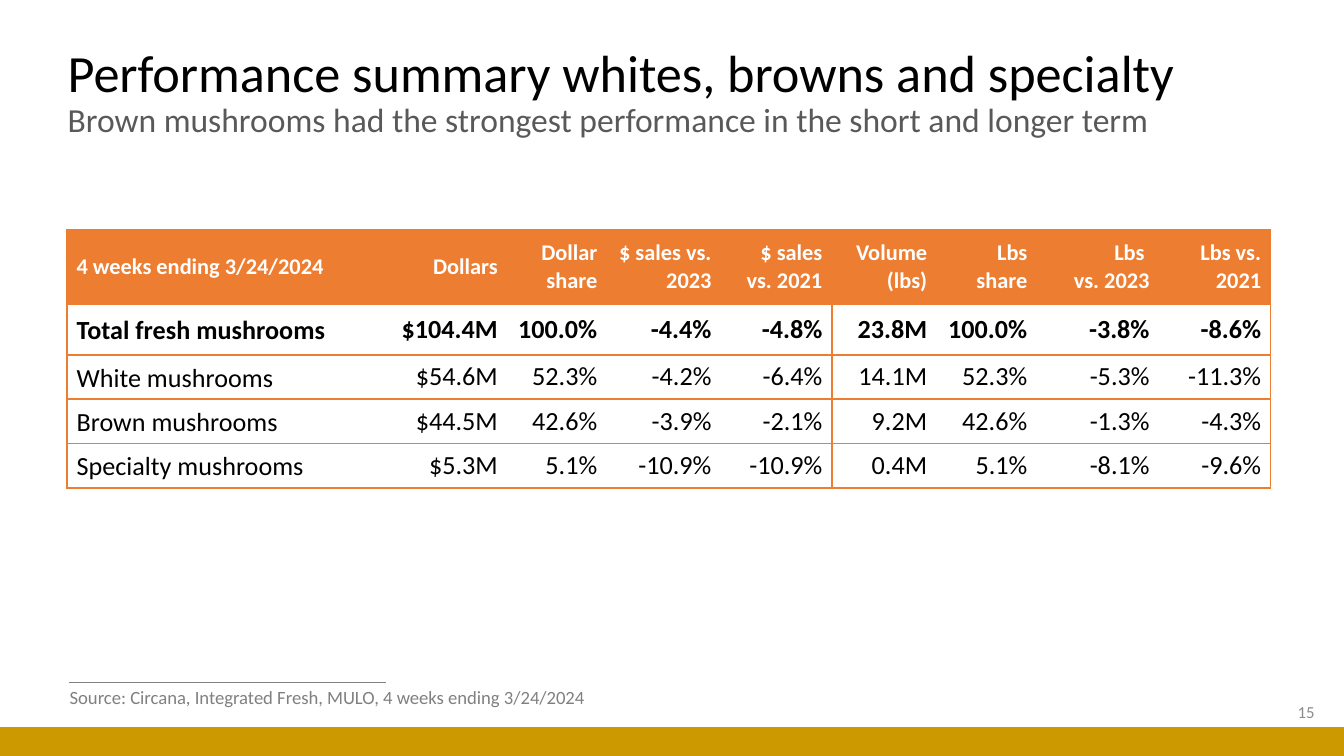
from dataclasses import dataclass
from itertools import accumulate

from lxml import etree
from pptx import Presentation
from pptx import util as u
from pptx.dml.color import RGBColor
from pptx.enum import shapes, text
from pptx.oxml import ns

COLUMNS, ROWS = 100, 56.25
UNIT = u.Inches(0.1)
ORANGE, GOLD, GREY = "ED7D31", "CC9900", "808080"
LEFT, RIGHT = text.PP_ALIGN.LEFT, text.PP_ALIGN.RIGHT
MIDDLE, TOP = text.MSO_ANCHOR.MIDDLE, text.MSO_ANCHOR.TOP


@dataclass(frozen=True)
class Area:
    column: float
    row: float
    columns: float
    rows: float

    def lengths(self) -> list[int]:
        return [grid(n) for n in (self.column, self.row, self.columns, self.rows)]


@dataclass(frozen=True)
class TableRow:
    height: float
    cells: tuple[str, ...]
    size: float = 14
    color: str = "000000"
    bold: bool = False
    fill: str | None = None
    label_spacing: float | None = 1.07


TABLE_COLUMNS = (23.7, 9.05, 7.4, 8.5, 8.25, 7.8, 7.45, 9.1, 8.3)
GROUP_STARTS, GROUP_ENDS = (0, 5), (4, 8)
TABLE_ROWS = (
    TableRow(5.5, ("4 weeks ending 3/24/2024", "Dollars", "Dollar share",
                   "$ sales vs. 2023", "$ sales vs. 2021", "Volume (lbs)",
                   "Lbs\nshare", "Lbs \vvs. 2023", "Lbs vs. 2021"),
             size=12, color="FFFFFF", bold=True, fill=ORANGE, label_spacing=None),
    TableRow(3.8, ("Total fresh mushrooms", "$104.4M", "100.0%", "-4.4%", "-4.8%",
                   "23.8M", "100.0%", "-3.8%", "-8.6%"), bold=True),
    TableRow(3.3, ("White mushrooms", "$54.6M", "52.3%", "-4.2%", "-6.4%",
                   "14.1M", "52.3%", "-5.3%", "-11.3%")),
    TableRow(3.3, ("Brown mushrooms", "$44.5M", "42.6%", "-3.9%", "-2.1%",
                   "9.2M", "42.6%", "-1.3%", "-4.3%")),
    TableRow(3.3, ("Specialty mushrooms", "$5.3M", "5.1%", "-10.9%", "-10.9%",
                   "0.4M", "5.1%", "-8.1%", "-9.6%")),
)


def grid(count: float) -> int:
    return round(count * UNIT)


def rgb(color: str) -> RGBColor:
    return RGBColor.from_string(color)


def write(frame, content: str, *, size: float, color: str, bold: bool = False,
          align=LEFT, spacing: float | None = None) -> None:
    frame.text = content
    for paragraph in frame.paragraphs:
        paragraph.alignment = align
        if spacing:
            paragraph.line_spacing = spacing
        for run in paragraph.runs:
            run.font.name = "Calibri"
            run.font.size = u.Pt(size)
            run.font.bold = bold
            run.font.color.rgb = rgb(color)


def add_text(slide, area: Area, content: str, *, anchor=MIDDLE,
             wrap: bool = True, **style):
    frame = slide.shapes.add_textbox(*area.lengths()).text_frame
    frame.word_wrap = wrap
    frame.vertical_anchor = anchor
    write(frame, content, **style)
    return frame


def set_borders(cell, visible: str) -> None:
    properties = cell._tc.get_or_add_tcPr()
    for side in "LRTB":
        border = etree.SubElement(properties, ns.qn(f"a:ln{side}"), w=str(u.Pt(1)))
        if side in visible:
            fill = etree.SubElement(border, ns.qn("a:solidFill"))
            etree.SubElement(fill, ns.qn("a:srgbClr"), val=ORANGE)
        else:
            etree.SubElement(border, ns.qn("a:noFill"))


def fill_cell(cell, content: str, row: TableRow, position: int) -> None:
    cell.margin_left = cell.margin_right = u.Inches(0.07)
    cell.margin_top = cell.margin_bottom = 0
    cell.vertical_anchor = MIDDLE
    set_borders(cell, "TB" + "L" * (position in GROUP_STARTS)
                + "R" * (position in GROUP_ENDS))
    if row.fill:
        cell.fill.solid()
        cell.fill.fore_color.rgb = rgb(row.fill)
    else:
        cell.fill.background()
    write(cell.text_frame, content, size=row.size, color=row.color, bold=row.bold,
          align=RIGHT if position else LEFT,
          spacing=None if position else row.label_spacing)


def add_performance_table(slide, column: float, top: float) -> None:
    area = Area(column, top, sum(TABLE_COLUMNS), sum(r.height for r in TABLE_ROWS))
    table = slide.shapes.add_table(
        len(TABLE_ROWS), len(TABLE_COLUMNS), *area.lengths()).table
    table.horz_banding = False
    edges = [grid(n) for n in accumulate(TABLE_COLUMNS, initial=0)]
    for table_column, start, end in zip(table.columns, edges, edges[1:]):
        table_column.width = end - start
    for index, row in enumerate(TABLE_ROWS):
        table.rows[index].height = grid(row.height)
        for position, content in enumerate(row.cells):
            fill_cell(table.cell(index, position), content, row, position)


def add_footer(slide) -> None:
    rule = slide.shapes.add_connector(
        shapes.MSO_CONNECTOR.STRAIGHT, *map(grid, (5.1, 50.8, 28.7, 50.8)))
    rule.line.color.rgb = rgb(GREY)
    rule.line.width = u.Pt(0.5)
    etree.SubElement(rule._element.spPr, ns.qn("a:effectLst"))
    band = slide.shapes.add_shape(
        shapes.MSO_SHAPE.RECTANGLE, *Area(0, ROWS - 2.15, COLUMNS, 2.15).lengths())
    band.shadow.inherit = False
    band.fill.solid()
    band.fill.fore_color.rgb = rgb(GOLD)
    band.line.fill.background()
    add_text(slide, Area(76.3, 51.5, 22.5, 3), "15",
             size=9, color="8C8C8C", align=RIGHT)
    source = add_text(slide, Area(4.2, 50.55, 41.8, 2.7),
                      "Source: Circana, Integrated Fresh, MULO, 4 weeks ending 3/24/2024",
                      anchor=TOP, wrap=False, size=10, color=GREY)
    source.auto_size = text.MSO_AUTO_SIZE.SHAPE_TO_FIT_TEXT


def add_heading(slide) -> None:
    heading = add_text(
        slide, Area(4.05, 3, 93.7, 7.9),
        "Performance summary whites, browns and specialty\v"
        "Brown mushrooms had the strongest performance in the short and longer term",
        size=28, color="000000", spacing=0.9)
    subtitle = heading.paragraphs[0].runs[1].font
    subtitle.size = u.Pt(18)
    subtitle.color.rgb = rgb("595959")


def main() -> None:
    deck = Presentation()
    deck.slide_width, deck.slide_height = grid(COLUMNS), grid(ROWS)
    slide = deck.slides.add_slide(deck.slide_layouts[6])
    add_footer(slide)
    add_heading(slide)
    add_performance_table(slide, 5, 17.1)
    deck.save("out.pptx")


if __name__ == "__main__":
    main()
